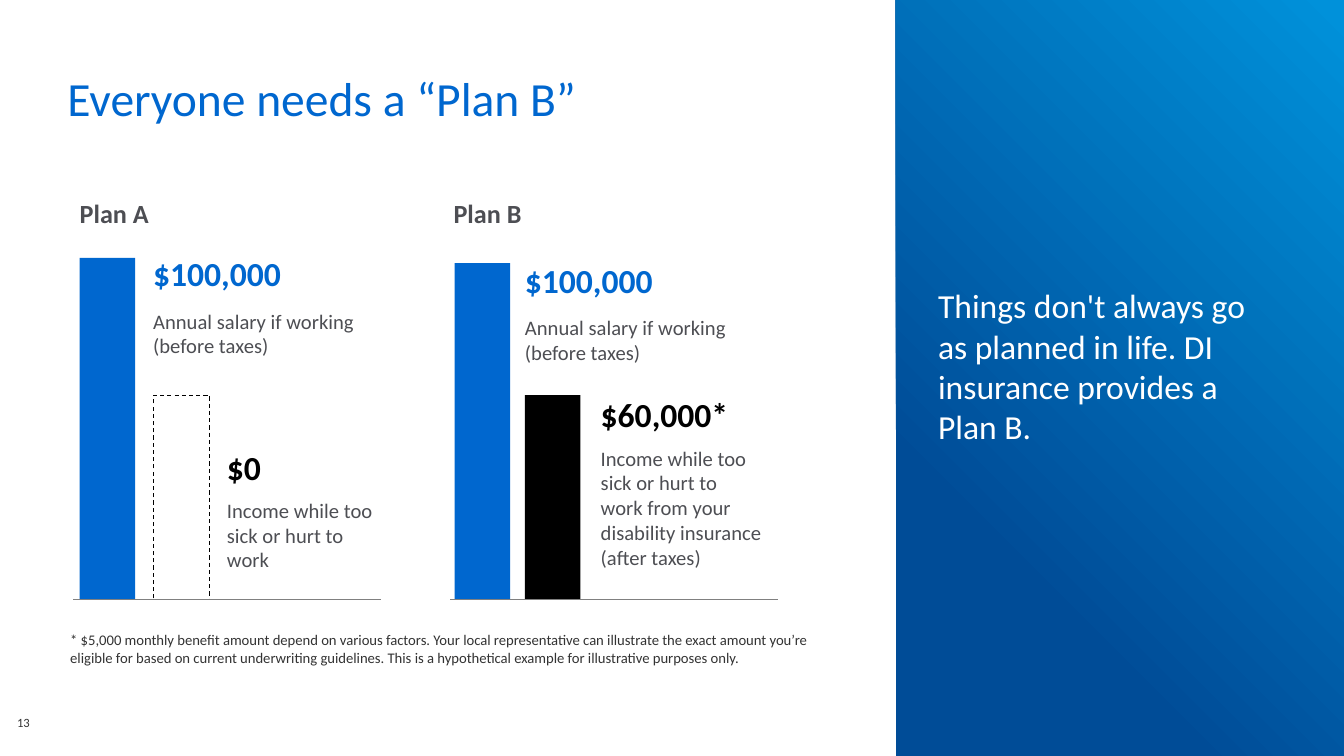
from dataclasses import dataclass

from lxml.etree import SubElement
from pptx import Presentation
from pptx.dml.color import RGBColor
from pptx.enum.dml import MSO_LINE
from pptx.enum.shapes import MSO_CONNECTOR, MSO_SHAPE
from pptx.enum.text import MSO_ANCHOR, MSO_AUTO_SIZE
from pptx.oxml.ns import qn
from pptx.shapes.autoshape import Shape
from pptx.slide import Slide
from pptx.util import Cm, Pt

COLORS = {
    "blue": "0067CF", "navy": "004C97", "sky": "0091DA", "black": "000000",
    "gray": "4D4E53", "rule": "808080", "note": "333333", "white": "FFFFFF",
}
FONT = "Calibri"
BASELINE = 15.11
BAR_WIDTH = 1.4


@dataclass
class Para:
    text: str
    size: float
    color: str
    bold: bool = False
    after: float = 0


@dataclass
class Label:
    x: float
    y: float
    w: float
    h: float
    paras: list[Para]
    inset: bool = False
    bottom: bool = False


@dataclass
class Bar:
    x: float
    top: float
    color: str | None


@dataclass
class Axis:
    start: float
    end: float


def rgb(name: str) -> RGBColor:
    return RGBColor.from_string(COLORS[name])


def amount(text: str, color: str, note: str, after: float) -> list[Para]:
    return [Para(text, 24, color, True, after), Para(note, 14.7, "gray")]


def add_rect(s: Slide, x: float, y: float, w: float, h: float) -> Shape:
    sp = s.shapes.add_shape(MSO_SHAPE.RECTANGLE, Cm(x), Cm(y), Cm(w), Cm(h))
    sp.shadow.inherit = False
    sp.line.fill.background()
    return sp


def add_panel(s: Slide) -> None:
    fill = add_rect(s, 22.58, 0, 11.29, 19.05).fill
    fill.gradient()
    fill.gradient_angle = 45
    for stop, pos, color in zip(fill.gradient_stops, (0.25, 0.99), ("navy", "sky")):
        stop.position = pos
        stop.color.rgb = rgb(color)


def add_bar(s: Slide, bar: Bar) -> None:
    sp = add_rect(s, bar.x, bar.top, BAR_WIDTH, BASELINE - bar.top)
    if bar.color:
        sp.fill.solid()
        sp.fill.fore_color.rgb = rgb(bar.color)
    else:
        sp.fill.background()
        sp.line.color.rgb = rgb("black")
        sp.line.width = Pt(0.75)
        sp.line.dash_style = MSO_LINE.DASH


def add_axis(s: Slide, axis: Axis) -> None:
    ln = s.shapes.add_connector(
        MSO_CONNECTOR.STRAIGHT, Cm(axis.start), Cm(BASELINE), Cm(axis.end), Cm(BASELINE))
    ln.line.color.rgb = rgb("rule")
    ln.line.width = Pt(1)
    SubElement(ln._element.spPr, qn("a:effectLst"))


def add_label(s: Slide, label: Label) -> None:
    tf = s.shapes.add_textbox(Cm(label.x), Cm(label.y), Cm(label.w), Cm(label.h)).text_frame
    tf.word_wrap = True
    tf.vertical_anchor = MSO_ANCHOR.BOTTOM if label.bottom else MSO_ANCHOR.TOP
    if label.inset:
        tf.auto_size = MSO_AUTO_SIZE.SHAPE_TO_FIT_TEXT
    else:
        tf.margin_left = tf.margin_right = tf.margin_top = tf.margin_bottom = 0
    for i, para in enumerate(label.paras):
        p = tf.add_paragraph() if i else tf.paragraphs[0]
        p.space_after = Pt(para.after)
        for j, line in enumerate(para.text.split("\n")):
            if j:
                p.add_line_break()
            r = p.add_run()
            r.text = line
            r.font.name = FONT
            r.font.size = Pt(para.size)
            r.font.bold = para.bold
            r.font.color.rgb = rgb(para.color)


SALARY = amount("$100,000", "blue", "Annual salary if working \n(before taxes)", 10.7)
BARS = [
    Bar(2.01, 6.5, "blue"), Bar(3.88, 9.96, None),
    Bar(11.46, 6.63, "blue"), Bar(13.23, 9.96, "black"),
]
AXES = [Axis(1.85, 9.6), Axis(11.35, 19.61)]
LABELS = [
    Label(1.7, 1.73, 19.69, 1.65, [Para("Everyone needs a “Plan B”", 34, "blue")]),
    Label(2.01, 4.98, 3.91, 0.81, [Para("Plan A", 18.7, "gray", True)]),
    Label(11.43, 4.97, 4.19, 0.81, [Para("Plan B", 18.7, "gray", True)]),
    Label(3.86, 6.38, 6.02, 2.59, SALARY),
    Label(13.23, 6.55, 6.76, 3.23, SALARY),
    Label(5.72, 11.25, 3.91, 3.38,
          amount("$0", "black", "Income while too sick or hurt to work", 8)),
    Label(15.14, 9.93, 4.47, 4.7,
          amount("$60,000*", "black", "Income while too sick or hurt to \n"
                 "work from your disability insurance (after taxes)", 8)),
    Label(23.39, 7.06, 9.09, 5.13,
          [Para("Things don't always go as planned in life. DI insurance provides a Plan B.",
                24, "white")], inset=True),
    Label(0.43, 17.35, 1.17, 1.04, [Para("13", 9, "note")], bottom=True),
    Label(1.52, 15.77, 19.69, 1.6,
          [Para("* $5,000 monthly benefit amount depend on various factors. Your local "
                "representative can illustrate the exact amount you’re eligible for based on "
                "current underwriting guidelines. This is a hypothetical example for "
                "illustrative purposes only.", 10.5, "note")], inset=True),
]


def main() -> None:
    """Build the Plan A and Plan B income comparison slide."""
    prs = Presentation()
    prs.slide_width, prs.slide_height = Cm(33.87), Cm(19.05)
    s = prs.slides.add_slide(prs.slide_layouts[6])
    add_panel(s)
    for bar in BARS:
        add_bar(s, bar)
    for axis in AXES:
        add_axis(s, axis)
    for label in LABELS:
        add_label(s, label)
    prs.save("out.pptx")


if __name__ == "__main__":
    main()
